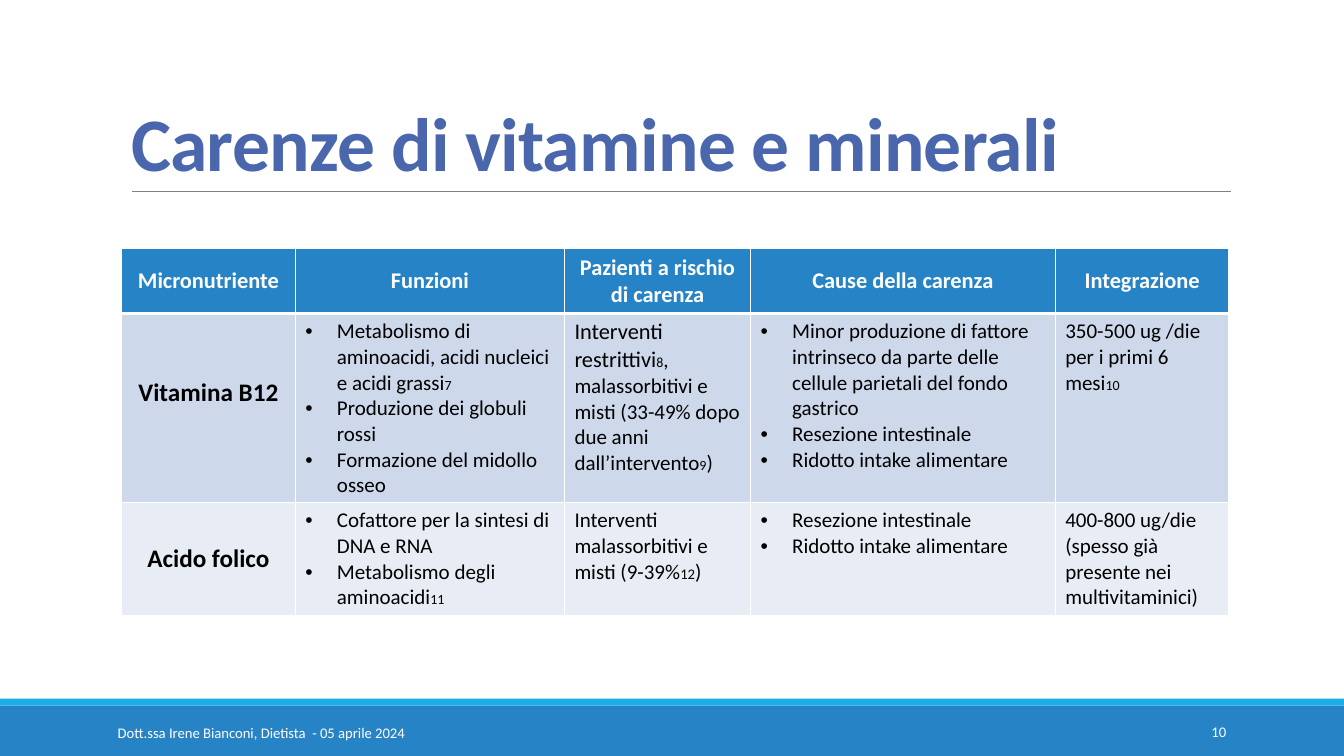
from lxml import etree
from pptx import Presentation
from pptx.dml.color import RGBColor
from pptx.enum.shapes import MSO_CONNECTOR, MSO_SHAPE
from pptx.enum.text import MSO_ANCHOR as ANCHOR, MSO_AUTO_SIZE, PP_ALIGN as ALIGN
from pptx.oxml.ns import qn
from pptx.util import Pt

BLUE, CYAN, WHITE, BLACK = "2683C6", "1CADE4", "FFFFFF", "000000"


def rgb(color):
    return RGBColor.from_string(color)


def style(p, size, color, bold=False, align=ALIGN.LEFT):
    p.font.name, p.font.size, p.font.bold = "Calibri", Pt(size), bold
    p.font.color.rgb = rgb(color)
    p.alignment = align


prs = Presentation()
prs.slide_width, prs.slide_height = Pt(960), Pt(540)
s = prs.slides.add_slide(prs.slide_layouts[5])

# Footer bands
for top, height, color in [(504, 36, BLUE), (499, 5, CYAN)]:
    sp = s.shapes.add_shape(MSO_SHAPE.RECTANGLE, 0, Pt(top), Pt(960), Pt(height))
    sp.shadow.inherit = False
    sp.fill.solid()
    sp.fill.fore_color.rgb = rgb(color)
    sp.line.fill.background()

# Rule under the title
rule = s.shapes.add_connector(MSO_CONNECTOR.STRAIGHT, Pt(94.3), Pt(136.8), Pt(879), Pt(136.8))
rule.line.color.rgb = rgb("808080")
rule.line.width = Pt(0.5)
etree.SubElement(rule._element.spPr, qn("a:effectLst"))

# Title
title = s.shapes.title
title.left, title.top, title.width, title.height = Pt(86.4), Pt(22.3), Pt(792), Pt(114.5)
tf = title.text_frame
tf.text = "Carenze di vitamine e minerali"
tf.auto_size, tf.vertical_anchor = MSO_AUTO_SIZE.NONE, ANCHOR.BOTTOM
p = tf.paragraphs[0]
p.line_spacing = 0.85
style(p, 54, "4A66AC", True)
p.runs[0]._r.get_or_add_rPr().set("spc", "-50")

# Footer text and page number
footers = [
    ("Dott.ssa Irene Bianconi, Dietista  - 05 aprile 2024", 77, 513.4, 555, 20, ALIGN.LEFT),
    ("10", 780, 508.3, 103, 29, ALIGN.RIGHT),
]
for text, left, top, width, height, align in footers:
    tf = s.shapes.add_textbox(Pt(left), Pt(top), Pt(width), Pt(height)).text_frame
    tf.word_wrap, tf.vertical_anchor = True, ANCHOR.MIDDLE
    tf.text = text
    style(tf.paragraphs[0], 10.5, WHITE, align=align)

# Table content: a cell is a list of paragraphs, a paragraph a list of (text, size) runs
headers = ["Micronutriente", "Funzioni", "Pazienti a rischio di carenza",
           "Cause della carenza", "Integrazione"]
rows = [
    ["Vitamina B12",
     [[("Metabolismo di aminoacidi, acidi nucleici e acidi grassi", 15), ("7", 10)],
      [("Produzione dei globuli rossi", 15)],
      [("Formazione del midollo osseo", 15)]],
     [[("Interventi restrittivi", 16), ("8", 10),
       (", malassorbitivi e misti (33-49% dopo due anni dall’intervento", 15),
       ("9", 10), (")", 15)]],
     [[("Minor produzione di fattore intrinseco da parte delle cellule parietali "
        "del fondo gastrico", 15)],
      [("Resezione intestinale", 15)],
      [("Ridotto intake alimentare", 15)]],
     [[("350-500 ug /die per i primi 6 mesi", 15), ("10", 10)]]],
    ["Acido folico",
     [[("Cofattore per la sintesi di DNA e RNA", 15)],
      [("Metabolismo degli aminoacidi", 15), ("11", 10)]],
     [[("Interventi malassorbitivi e misti (9-39%", 15), ("12", 10.5), (")", 15)]],
     [[("Resezione intestinale", 15)],
      [("Ridotto intake alimentare", 15)]],
     [[("400-800 ug/die (spesso già presente nei multivitaminici)", 15)]]],
]
BULLETED = (1, 3)

# Table grid
frame = s.shapes.add_table(3, 5, Pt(86.8), Pt(177.8), Pt(792), Pt(262))
table = frame.table
for column, width in zip(table.columns, [124.2, 192.2, 133, 217.6, 124.2]):
    column.width = Pt(width)
for row, height in zip(table.rows, [46.2, 135.2, 80.6]):
    row.height = Pt(height)

# Header and micronutrient names
labels = [(0, j, text, 16, WHITE) for j, text in enumerate(headers)]
labels += [(i, 0, row[0], 18, BLACK) for i, row in enumerate(rows, 1)]
for i, j, text, size, color in labels:
    cell = table.cell(i, j)
    cell.text = text
    cell.vertical_anchor = ANCHOR.MIDDLE
    style(cell.text_frame.paragraphs[0], size, color, True, ALIGN.CENTER)
table.cell(1, 0).margin_bottom = Pt(25)

# Body cells
for i, row in enumerate(rows, 1):
    for j, paragraphs in enumerate(row[1:], 1):
        tf = table.cell(i, j).text_frame
        for n, runs in enumerate(paragraphs):
            p = tf.add_paragraph() if n else tf.paragraphs[0]
            style(p, 15, BLACK)
            for text, size in runs:
                r = p.add_run()
                r.text = text
                if size != 15:
                    r.font.size = Pt(size)
            if j in BULLETED:
                pPr = p._p.get_or_add_pPr()
                pPr.set("marL", str(Pt(22.5)))
                pPr.set("indent", str(-Pt(22.5)))
                bullet = etree.Element(qn("a:buChar"), char="•")
                pPr.insert(0, bullet)
                bullet.addprevious(etree.Element(qn("a:buFont"), typeface="Arial"))

# Fills and white borders
for i, color in enumerate([BLUE, "CDD9EA", "E8EDF5"]):
    for j in range(5):
        cell = table.cell(i, j)
        tcPr = cell._tc.get_or_add_tcPr()
        for side in "LRTB":
            heavy = (i, side) in [(0, "B"), (1, "T")]
            ln = etree.SubElement(tcPr, qn(f"a:ln{side}"), w=str(Pt(3 if heavy else 1)))
            fill = etree.SubElement(ln, qn("a:solidFill"))
            etree.SubElement(fill, qn("a:srgbClr"), val=WHITE)
        cell.fill.solid()
        cell.fill.fore_color.rgb = rgb(color)

prs.save("out.pptx")
